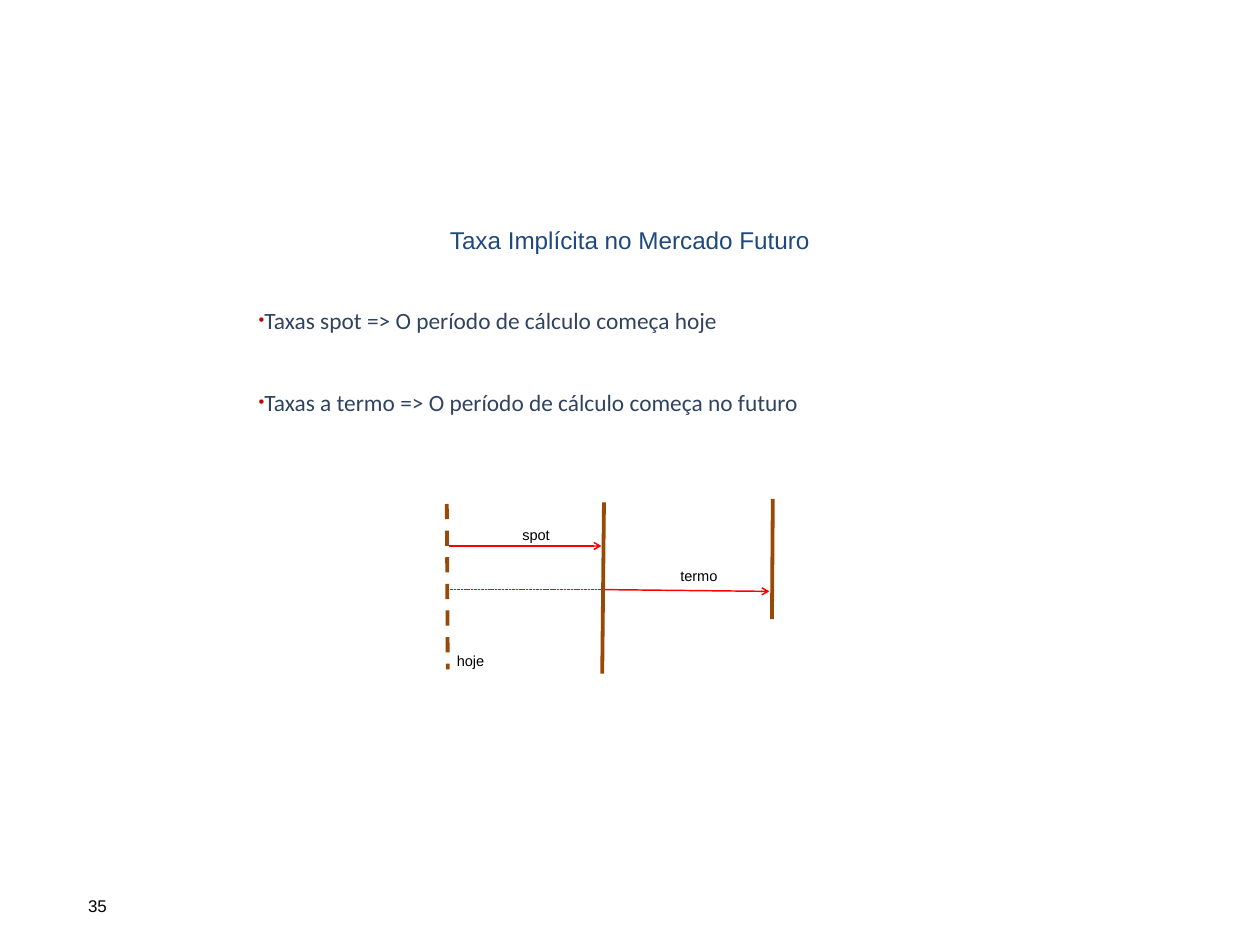
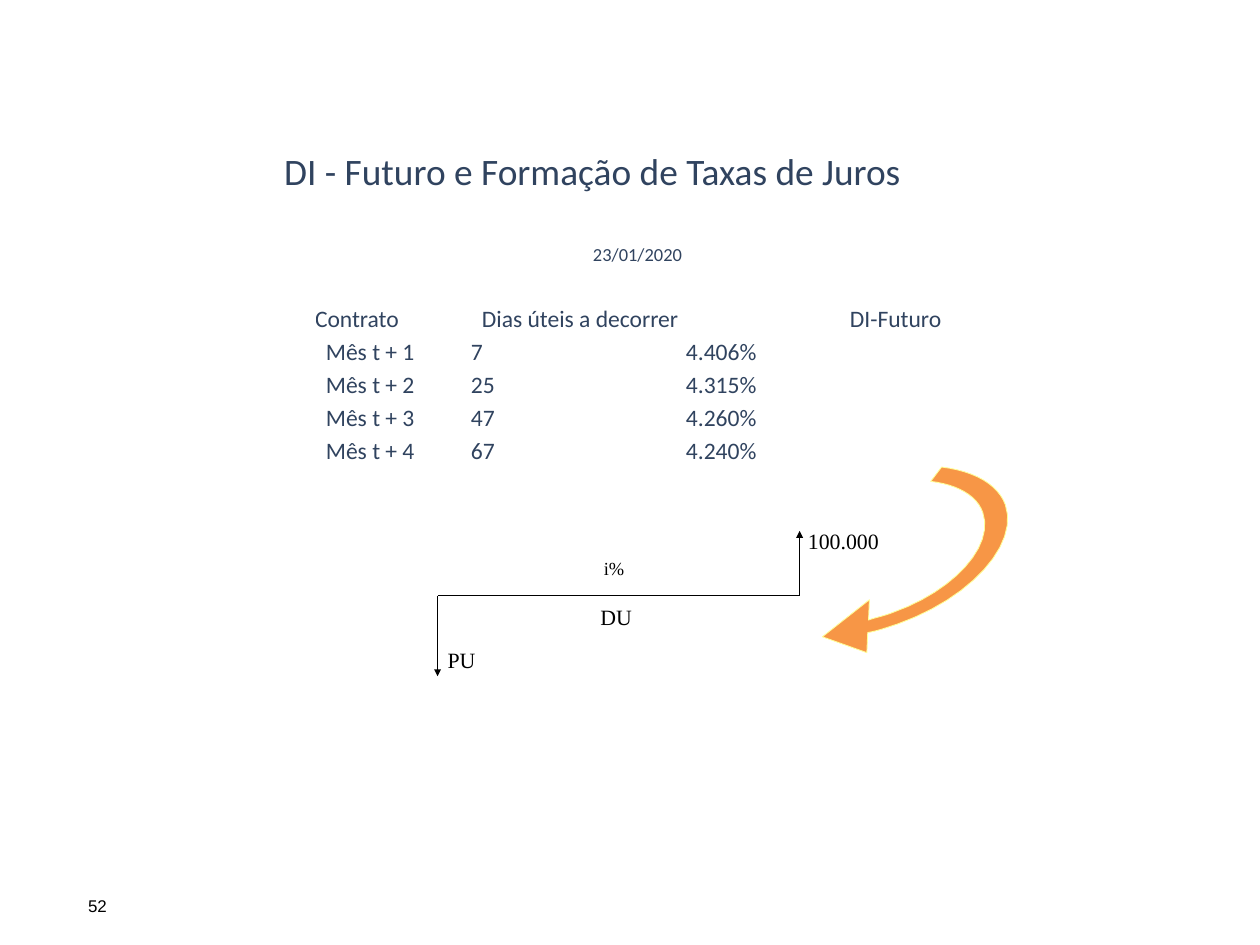
from dataclasses import dataclass

from lxml.etree import SubElement
from pptx import Presentation
from pptx.dml.color import RGBColor
from pptx.enum.dml import MSO_LINE
from pptx.enum.shapes import MSO_CONNECTOR
from pptx.enum.text import MSO_ANCHOR, MSO_AUTO_SIZE, PP_ALIGN
from pptx.oxml.ns import qn
from pptx.util import Pt


@dataclass(frozen=True)
class Theme:
    black: str = "000000"
    navy: str = "30435F"
    blue: str = "1F497D"
    brown: str = "984807"
    red: str = "FF0000"
    bullet: str = "CC0000"
    orange: str = "F79646"
    cream: str = "FFFF99"
    sans: str = "Arial"
    body: str = "Calibri"
    serif: str = "Times New Roman"
    label: float = 12.5
    page: float = 14.5
    note: float = 15.8
    flow: float = 18.7
    point: float = 20
    row: float = 20.2
    head: float = 20.8
    title: float = 32


look = Theme()


def write(place, text, size, box=None, font=look.body, color=look.navy,
          align=PP_ALIGN.LEFT, anchor=MSO_ANCHOR.TOP, wrap=True, grow=False):
    """Write one paragraph per line, in a new box on a slide or in a table cell."""
    if box:
        frame = place.shapes.add_textbox(*map(Pt, box)).text_frame
        frame.word_wrap = wrap
        frame.auto_size = MSO_AUTO_SIZE.SHAPE_TO_FIT_TEXT if grow else MSO_AUTO_SIZE.NONE
        frame.vertical_anchor = anchor
    else:
        frame = place.text_frame
        place.vertical_anchor = anchor
    for at, words in enumerate(text.split("\n")):
        para = frame.add_paragraph() if at else frame.paragraphs[0]
        para.alignment = align
        run = para.add_run()
        run.text = words
        run.font.name = font
        run.font.size = Pt(size)
        run.font.color.rgb = RGBColor.from_string(color)
    return frame


def draw(slide, ends, color, width, dash=None, arrow=None):
    link = slide.shapes.add_connector(MSO_CONNECTOR.STRAIGHT, *map(Pt, ends))
    link.line.color.rgb = RGBColor.from_string(color)
    link.line.width = Pt(width)
    if dash:
        link.line.dash_style = dash
    if arrow:
        SubElement(link.line._get_or_add_ln(), qn("a:tailEnd"), type=arrow)
    SubElement(link._element.spPr, qn("a:effectLst"))


deck = Presentation()
deck.slide_width, deck.slide_height = Pt(1080), Pt(810)
blank = deck.slide_layouts[6]
rates, curve = [deck.slides.add_slide(blank) for _ in range(2)]

for slide, number in ((rates, "35"), (curve, "52")):
    write(slide, number, look.page, (68.4, 763.9, 59.8, 25.2), look.sans,
          look.black, grow=True)

# Spot and forward rates
for ends, dash in (
    ((383, 432, 383.8, 573.8), MSO_LINE.DASH),
    ((517.7, 430.6, 516.2, 577.4), None),
    ((662.4, 427.7, 661.7, 530.6), None),
):
    draw(rates, ends, look.brown, 3.25, dash)
for ends in ((385.2, 468, 515.5, 468), (518.4, 505.4, 659.5, 506.9)):
    draw(rates, ends, look.red, 1.25, arrow="arrow")
draw(rates, (385.9, 505.4, 516.2, 505.4), look.red, 0.75, MSO_LINE.SQUARE_DOT)

for name, left, top, width in (
    ("spot", 440.6, 447.1, 38.2),
    ("termo", 576, 482.4, 46.8),
    ("hoje", 384.5, 555.1, 38.2),
):
    write(rates, name, look.label, (left, top, width, 22.3), look.sans,
          look.black, wrap=False, grow=True)

points = write(
    rates,
    "Taxas spot => O período de cálculo começa hoje\n"
    "Taxas a termo => O período de cálculo começa no futuro",
    look.point, (214.6, 263.5, 632.2, 141.8), align=PP_ALIGN.JUSTIFY)
for para in points.paragraphs:
    para.line_spacing = 0.8
    props = para._p.get_or_add_pPr()
    props.set("marL", "0")
    props.set("indent", str(-Pt(30)))
    tint = SubElement(props, qn("a:buClr"))
    SubElement(tint, qn("a:srgbClr"), val=look.bullet)
    SubElement(props, qn("a:buSzPct"), val="70000")
    SubElement(props, qn("a:buFont"), typeface=look.sans)
    SubElement(props, qn("a:buChar"), char="•")
points.paragraphs[1].space_before = Pt(51)

write(rates, "Taxa Implícita no Mercado Futuro", look.head,
      (265.7, 179.3, 547.9, 51.8), look.sans, look.blue, PP_ALIGN.CENTER,
      MSO_ANCHOR.MIDDLE)

# Futures curve
write(curve, "23/01/2020", look.note, (182.2, 204.5, 728.6, 28),
      align=PP_ALIGN.CENTER)

terms = ((7, "4.406%"), (25, "4.315%"), (47, "4.260%"), (67, "4.240%"))
rows = [("Contrato", "Dias úteis a decorrer", "DI-Futuro")]
rows += [(f"Mês t + {at}", str(days), rate)
         for at, (days, rate) in enumerate(terms, 1)]
widths, pitch = (133.7, 184.3, 240), 28.3
grid = curve.shapes.add_table(
    len(rows), len(widths), Pt(270), Pt(259.8), Pt(sum(widths)),
    Pt(pitch * len(rows))).table
grid.first_row = grid.horz_banding = False
for column, width in zip(grid.columns, widths):
    column.width = Pt(width)
for at, row in enumerate(rows):
    grid.rows[at].height = Pt(pitch)
    insets = (9.4, 0, 0) if at else (0, 9.4, 140.6)
    for col, (words, inset) in enumerate(zip(row, insets)):
        cell = grid.cell(at, col)
        cell.fill.background()
        cell.margin_left = Pt(inset)
        cell.margin_right = cell.margin_top = cell.margin_bottom = 0
        write(cell, words, look.row, anchor=MSO_ANCHOR.MIDDLE)

start, end, base = 375.1, 685.4, 510.5
draw(curve, (end, base, start, base), look.black, 0.75)
for side, tip in ((start, 579.6), (end, 455)):
    draw(curve, (side, base, side, tip), look.black, 0.75, arrow="triangle")

for name, box, size in (
    ("100.000", (685.4, 448.6, 76.3, 30.2), look.flow),
    ("PU", (376.6, 550.8, 38.9, 30.2), look.flow),
    ("i%", (510.5, 473.8, 32.4, 26.6), look.note),
    ("DU", (507.6, 514.1, 41.8, 30.2), look.flow),
):
    write(curve, name, size, box, look.serif, look.black, wrap=False, grow=True)

# Each step is one corner, or two controls and an end of a Bézier curve
steps = (
    ((750.9, 529.2), (758.2, 527.8), (765.4, 524.9)),
    ((817.9, 506.2), (852.5, 468), (842.4, 439.2)),
    ((837.4, 424.8), (820.8, 415.4), (797.8, 412.6)),
    ((807.1, 400.3),),
    ((835.9, 403.9), (855.4, 415.4), (861.8, 432.7)),
    ((873.4, 466.6), (832.3, 512.6), (769, 535)),
    ((760.3, 537.8), (752.4, 540.7), (743.8, 542.2)),
    ((743, 559.4),),
    ((704.9, 545.8),),
    ((745.2, 514.1),),
)
trail = [(744.5, 531.4)]
for step in steps:
    if len(step) == 1:
        trail += step
        continue
    knots = (trail[-1], *step)
    for part in range(1, 13):
        t = part / 12
        parts = ((1 - t) ** 3, 3 * t * (1 - t) ** 2, 3 * t * t * (1 - t), t ** 3)
        trail.append(tuple(sum(w * knot[axis] for w, knot in zip(parts, knots))
                           for axis in (0, 1)))
pen = curve.shapes.build_freeform(*map(Pt, trail[0]))
pen.add_line_segments([(Pt(x), Pt(y)) for x, y in trail[1:]], close=True)
swoop = pen.convert_to_shape()
swoop.shadow.inherit = False
swoop.fill.solid()
swoop.fill.fore_color.rgb = RGBColor.from_string(look.orange)
swoop.line.color.rgb = RGBColor.from_string(look.cream)
swoop.line.width = Pt(0.75)

write(curve, "DI - Futuro e Formação de Taxas de Juros", look.title,
      (178.6, 123.1, 658.8, 42.5), align=PP_ALIGN.CENTER)

deck.save("out.pptx")
